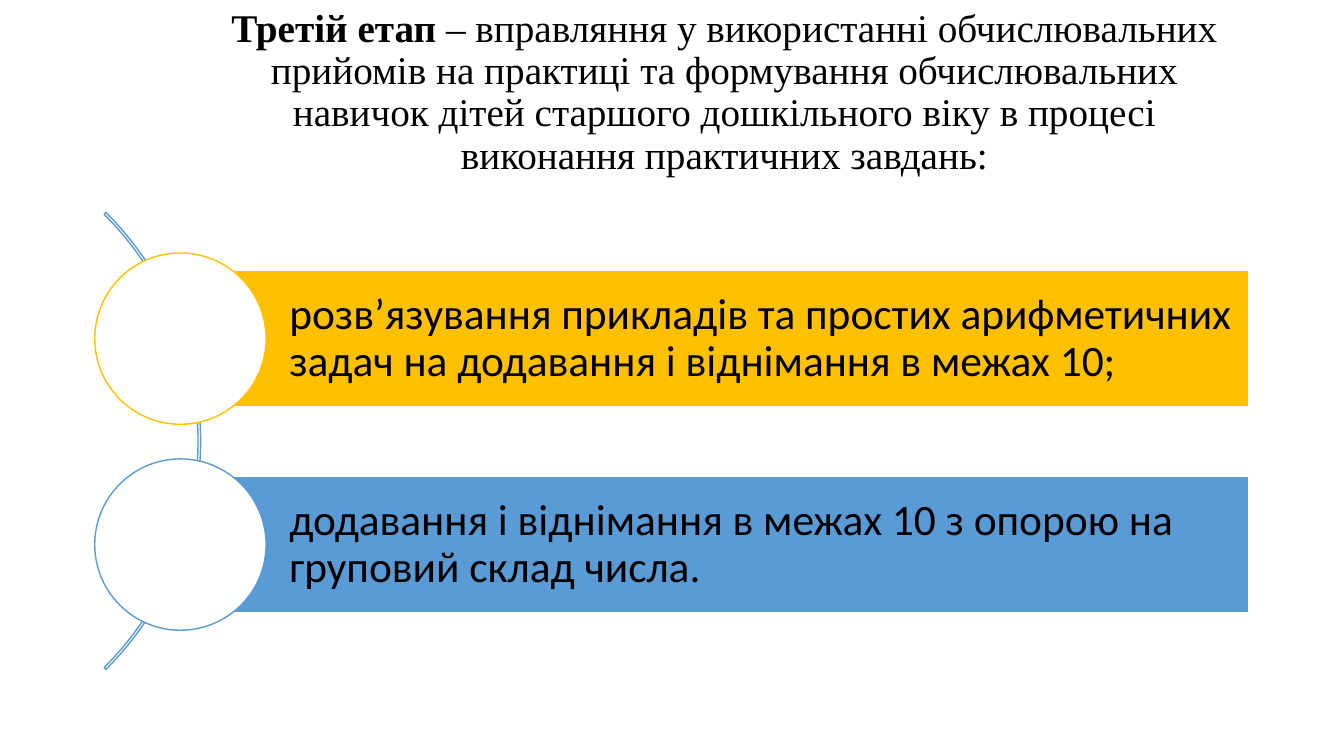
from dataclasses import dataclass

from pptx import Presentation
from pptx.dml.color import RGBColor
from pptx.enum.shapes import MSO_SHAPE
from pptx.enum.text import MSO_ANCHOR, MSO_AUTO_SIZE, PP_ALIGN
from pptx.shapes.autoshape import Shape
from pptx.slide import Slide
from pptx.text.text import TextFrame, _Paragraph
from pptx.util import Pt

BLACK, WHITE, BLUE, GOLD = "000000", "FFFFFF", "5B9BD5", "FFC000"
BAR_LEFT, BAR_WIDTH, BAR_HEIGHT = 128.9, 763.2, 97.9
CIRCLE_SIZE = 122.4
FIRST_CENTRE, TASK_STEP = 241.9, 147.1


@dataclass(frozen=True)
class Task:
    wording: str
    accent: str


TASKS = [
    Task("розв’язування прикладів та простих арифметичних задач на додавання і віднімання в межах 10;", GOLD),
    Task("додавання і віднімання в межах 10 з опорою на груповий склад числа.", BLUE),
]


def colour(value: str) -> RGBColor:
    return RGBColor.from_string(value)


def add_outlined(slide: Slide, preset: MSO_SHAPE, left: float, top: float,
                 width: float, height: float, fill: str | None, line: str) -> Shape:
    figure = slide.shapes.add_shape(preset, Pt(left), Pt(top), Pt(width), Pt(height))
    figure.shadow.inherit = False
    if fill is None:
        figure.fill.background()
    else:
        figure.fill.solid()
        figure.fill.fore_color.rgb = colour(fill)
    figure.line.color.rgb = colour(line)
    figure.line.width = Pt(1)
    return figure


def set_frame(frame: TextFrame, left: float, top: float, right: float, bottom: float) -> None:
    frame.word_wrap = True
    frame.auto_size = MSO_AUTO_SIZE.NONE
    frame.vertical_anchor = MSO_ANCHOR.MIDDLE
    frame.margin_left, frame.margin_top = Pt(left), Pt(top)
    frame.margin_right, frame.margin_bottom = Pt(right), Pt(bottom)


def add_run(paragraph: _Paragraph, wording: str, font: str, size: float, bold: bool = False) -> None:
    run = paragraph.add_run()
    run.text = wording
    run.font.name = font
    run.font.size = Pt(size)
    run.font.bold = bold
    run.font.color.rgb = colour(BLACK)


def add_heading(slide: Slide) -> None:
    heading = slide.shapes.title
    heading.left, heading.top = Pt(148.3), Pt(19.4)
    heading.width, heading.height = Pt(738), Pt(124.6)
    set_frame(heading.text_frame, 7.2, 3.6, 7.2, 34)
    paragraph = heading.text_frame.paragraphs[0]
    paragraph.alignment = PP_ALIGN.CENTER
    paragraph.line_spacing = 0.9
    add_run(paragraph, "Третій етап ", "Times New Roman", 28, True)
    add_run(paragraph, "– вправляння у використанні обчислювальних прийомів на практиці "
            "та формування обчислювальних навичок дітей старшого дошкільного віку "
            "в процесі виконання практичних завдань:", "Times New Roman", 28)


def add_arc(slide: Slide) -> None:
    arc = add_outlined(slide, MSO_SHAPE.BLOCK_ARC, -318.2, 84.2, 461.5, 461.5, None, BLUE)
    for index, value in enumerate((189, 27, 0.004)):
        arc.adjustments[index] = value


def add_task(slide: Slide, task: Task, centre: float) -> None:
    bar = add_outlined(slide, MSO_SHAPE.RECTANGLE, BAR_LEFT, centre - BAR_HEIGHT / 2,
                       BAR_WIDTH, BAR_HEIGHT, task.accent, WHITE)
    set_frame(bar.text_frame, 77.8, 6.5, 6.5, 6.5)
    paragraph = bar.text_frame.paragraphs[0]
    paragraph.alignment = PP_ALIGN.LEFT
    paragraph.line_spacing = 0.9
    add_run(paragraph, task.wording, "Calibri", 31)
    add_outlined(slide, MSO_SHAPE.OVAL, BAR_LEFT - CIRCLE_SIZE / 2, centre - CIRCLE_SIZE / 2,
                 CIRCLE_SIZE, CIRCLE_SIZE, WHITE, task.accent)


def main() -> None:
    presentation = Presentation()
    presentation.slide_width, presentation.slide_height = Pt(960), Pt(540)
    slide = presentation.slides.add_slide(presentation.slide_layouts[5])
    add_heading(slide)
    add_arc(slide)
    for index, task in enumerate(TASKS):
        add_task(slide, task, FIRST_CENTRE + index * TASK_STEP)
    presentation.save("out.pptx")


if __name__ == "__main__":
    main()
